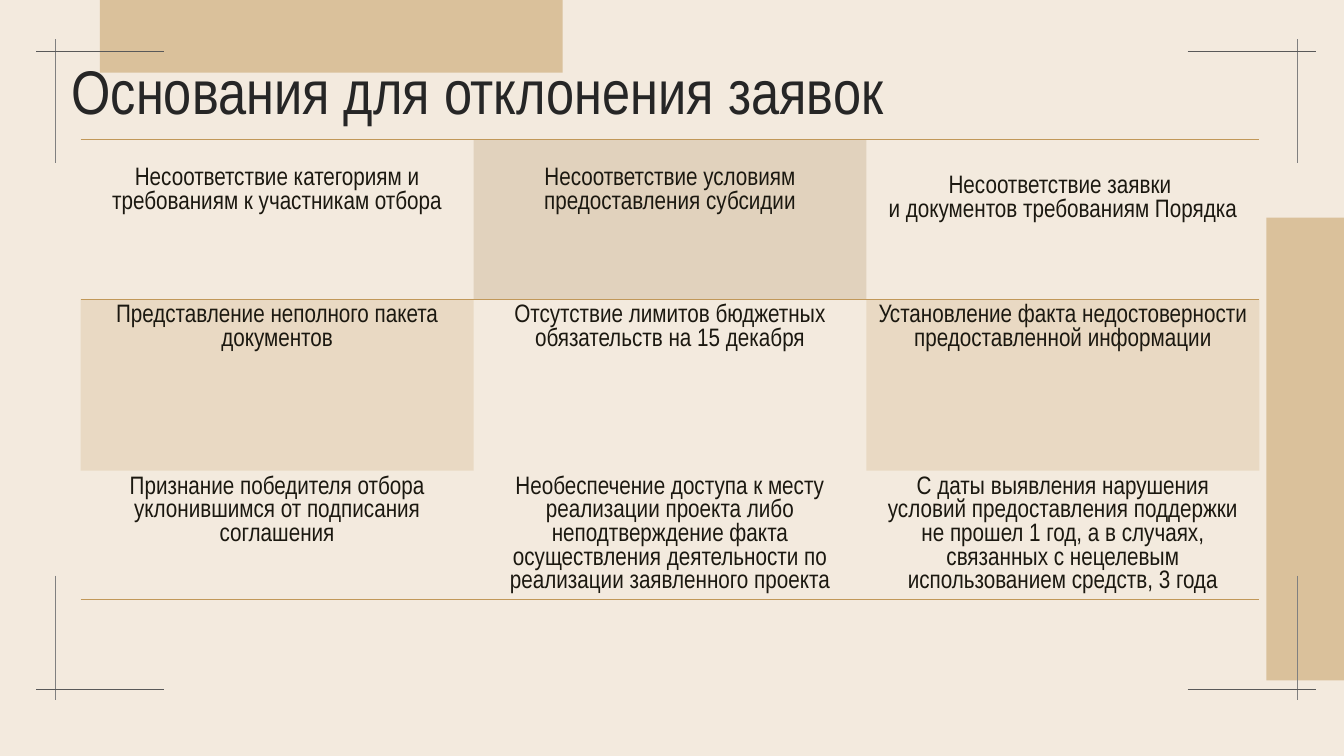
from lxml import etree
from pptx import Presentation
from pptx.dml.color import RGBColor
from pptx.enum.shapes import MSO_CONNECTOR, MSO_SHAPE
from pptx.enum.text import MSO_ANCHOR, MSO_AUTO_SIZE, PP_ALIGN
from pptx.oxml import parse_xml
from pptx.oxml.ns import nsdecls, qn
from pptx.util import Inches, Pt

STRAIGHT = MSO_CONNECTOR.STRAIGHT
RECTANGLE = MSO_SHAPE.RECTANGLE
MIDDLE = MSO_ANCHOR.MIDDLE
NO_AUTOFIT = MSO_AUTO_SIZE.NONE
LEFT, CENTER = PP_ALIGN.LEFT, PP_ALIGN.CENTER

FONT = "Arial Narrow"
PLAIN_TABLE_STYLE = "{2D5ABB26-0587-4C30-8999-92F81FD0307C}"
COLORS = {
    "background": "F3EADE",
    "band": "DAC19B",
    "vertical": "808080",
    "horizontal": "595959",
    "title": "262626",
    "text": "1B1810",
    "gold": "C19859",
    "brown": "9A743A",
}
GROUNDS = [
    [
        "Несоответствие категориям и требованиям к участникам отбора",
        "Несоответствие условиям предоставления субсидии",
        "Несоответствие заявки \vи документов требованиям Порядка",
    ],
    [
        "Представление неполного пакета документов",
        "Отсутствие лимитов бюджетных обязательств на 15 декабря",
        "Установление факта недостоверности предоставленной информации",
    ],
    [
        "Признание победителя отбора уклонившимся от подписания соглашения",
        "Необеспечение доступа к месту реализации проекта либо неподтверждение "
        "факта осуществления деятельности по реализации заявленного проекта",
        "С даты выявления нарушения условий предоставления поддержки не прошел "
        "1 год, а в случаях, связанных с нецелевым использованием средств, 3 года",
    ],
]
ROW_HEIGHTS = [1.59, 1.7, 1.28]
HEADER_TOP_MARGINS = [0.28, 0.28, 0.36]
CELL_TINTS = {(0, 1): "brown", (1, 0): "gold", (1, 2): "gold"}
BORDERS = {0: ["lnT", "lnB"], 2: ["lnB"]}


def color(name):
    return RGBColor.from_string(COLORS[name])


def format_paragraph(paragraph, size, color_name, alignment):
    paragraph.alignment = alignment
    paragraph.font.name = FONT
    paragraph.font.size = Pt(size)
    paragraph.font.color.rgb = color(color_name)


def add_band(page, left, top, width, height):
    band = page.shapes.add_shape(
        RECTANGLE, Inches(left), Inches(top), Inches(width), Inches(height))
    band.shadow.inherit = False
    band.fill.solid()
    band.fill.fore_color.rgb = color("band")
    band.line.fill.background()


def add_line(page, start_x, start_y, end_x, end_y, color_name):
    line = page.shapes.add_connector(
        STRAIGHT, Inches(start_x), Inches(start_y), Inches(end_x), Inches(end_y))
    line.line.color.rgb = color(color_name)
    line.line.width = Pt(1)
    etree.SubElement(line._element.spPr, qn("a:effectLst"))


def add_corner_lines(page):
    for x in (0.55, 12.87):
        for top in (0.39, 5.71):
            add_line(page, x, top, x, top + 1.23, "vertical")
    for left in (0.36, 11.78):
        for y in (0.51, 6.84):
            add_line(page, left, y, left + 1.27, y, "horizontal")


def set_title(page, text):
    title = page.shapes.title
    title.left, title.top = Inches(0.61), Inches(0.5)
    title.width, title.height = Inches(11.5), Inches(0.88)
    frame = title.text_frame
    frame.text = text
    frame.word_wrap = True
    frame.auto_size = NO_AUTOFIT
    frame.vertical_anchor = MIDDLE
    paragraph = frame.paragraphs[0]
    paragraph.line_spacing = 0.9
    format_paragraph(paragraph, 44, "title", LEFT)
    page.shapes._spTree.append(title._element)


def add_border(cell, side):
    cell._tc.get_or_add_tcPr().append(parse_xml(
        f'<a:{side} {nsdecls("a")} w="12700"><a:solidFill>'
        f'<a:srgbClr val="{COLORS["gold"]}"/></a:solidFill></a:{side}>'))


def fill_cell(cell, tint):
    if tint is None:
        cell.fill.background()
        return
    cell.fill.solid()
    cell.fill.fore_color.rgb = color(tint)
    swatch = cell._tc.tcPr.find(qn("a:solidFill")).find(qn("a:srgbClr"))
    etree.SubElement(swatch, qn("a:alpha"), val="20000")


def add_grounds_table(page):
    frame = page.shapes.add_table(
        len(GROUNDS), len(GROUNDS[0]), Inches(0.8), Inches(1.38),
        Inches(11.69), Inches(sum(ROW_HEIGHTS)))
    table = frame.table
    table.first_row = False
    table.horz_banding = False
    table._tbl.tblPr.find(qn("a:tableStyleId")).text = PLAIN_TABLE_STYLE
    for row, texts in enumerate(GROUNDS):
        table.rows[row].height = Inches(ROW_HEIGHTS[row])
        for column, text in enumerate(texts):
            cell = table.cell(row, column)
            cell.text = text
            if row == 0:
                cell.margin_top = Inches(HEADER_TOP_MARGINS[column])
            format_paragraph(cell.text_frame.paragraphs[0], 18, "text", CENTER)
            for side in BORDERS.get(row, []):
                add_border(cell, side)
            fill_cell(cell, CELL_TINTS.get((row, column)))


def main():
    deck = Presentation()
    deck.slide_width, deck.slide_height = Inches(13.33), Inches(7.5)
    page = deck.slides.add_slide(deck.slide_layouts[5])
    page.background.fill.solid()
    page.background.fill.fore_color.rgb = color("background")
    add_band(page, 12.56, 2.16, 0.99, 4.59)
    add_band(page, 0.99, -0.27, 4.59, 0.99)
    add_corner_lines(page)
    set_title(page, "Основания для отклонения заявок")
    add_grounds_table(page)
    deck.save("out.pptx")


if __name__ == "__main__":
    main()
